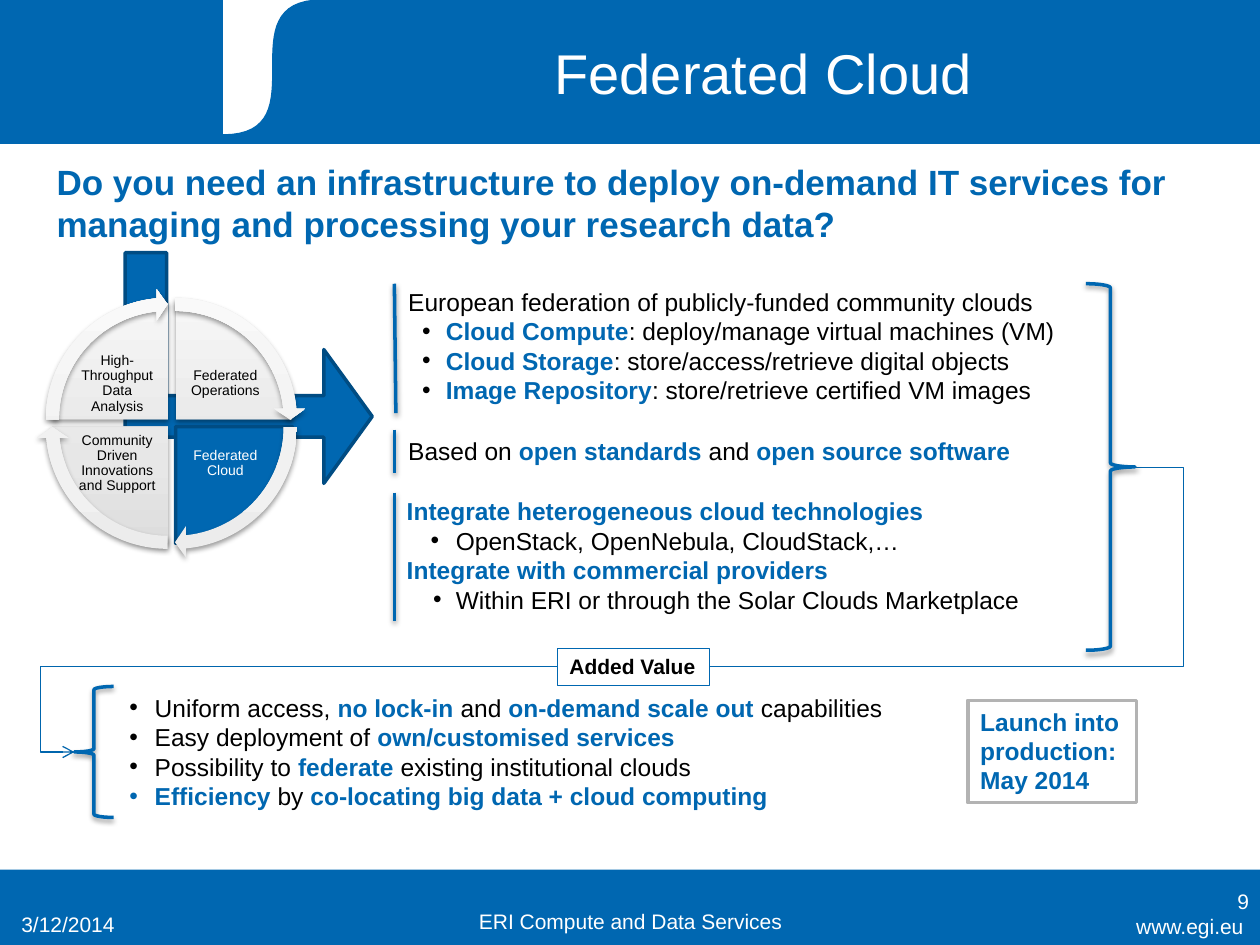
import dataclasses
import typing

import pptx
import pptx.dml.color
import pptx.enum.shapes
import pptx.enum.text
import pptx.oxml
import pptx.oxml.ns
import pptx.util

Cm = pptx.util.Cm
Pt = pptx.util.Pt
qn = pptx.oxml.ns.qn
KIND = pptx.enum.shapes.MSO_SHAPE
LINK = pptx.enum.shapes.MSO_CONNECTOR
ALIGN = pptx.enum.text.PP_ALIGN
ANCHOR = pptx.enum.text.MSO_ANCHOR
NS = 'xmlns:a="http://schemas.openxmlformats.org/drawingml/2006/main"'
HUES = {"blue": "0067B1", "edge": "004C83", "link": "0065AD", "white": "FFFFFF",
        "black": "000000", "gray": "B3B3B3"}
PALE = ((0, "DDDDDD"), (35, "E7E7E7"), (100, "F6F6F6"))
LIGHT = ((0, "ECECEC"), (35, "F1F1F1"), (100, "F9F9F9"))
Place = tuple[float, float, float, float]


@dataclasses.dataclass
class Item:
    text: str
    left: float = 0
    hang: float = 0
    dot: str = ""


@dataclasses.dataclass
class Block:
    place: Place
    items: list[Item]
    size: float = 14
    hue: str = "black"
    bold: bool = False
    fill: str = ""
    line: str = ""
    width: float = 0.75
    frame: dict = dataclasses.field(default_factory=dict)
    para: dict = dataclasses.field(default_factory=dict)


@dataclasses.dataclass
class Sector:
    text: str
    side: int
    row: int
    start: int
    stop: int


def tint(name: str) -> pptx.dml.color.RGBColor:
    return pptx.dml.color.RGBColor.from_string(HUES[name])


def apply(thing: typing.Any, values: dict) -> None:
    for key, value in values.items():
        setattr(thing, key, value)


def paint(shape: typing.Any, fill: str, line: str, width: float) -> None:
    if fill:
        shape.fill.solid()
        shape.fill.fore_color.rgb = tint(fill)
    else:
        shape.fill.background()
    if line:
        shape.line.color.rgb = tint(line)
        shape.line.width = Pt(width)
    else:
        shape.line.fill.background()
    shape.shadow.inherit = False


def shade(part: typing.Any, dark: bool = True) -> None:
    props = part._element.spPr
    for old in props.findall(qn("a:effectLst")):
        props.remove(old)
    glow = ('<a:outerShdw blurRad="39370" dist="20320" dir="5400000" rotWithShape="0">'
            '<a:srgbClr val="000000"><a:alpha val="38000"/></a:srgbClr></a:outerShdw>')
    props.append(pptx.oxml.parse_xml(f"<a:effectLst {NS}>{glow if dark else ''}</a:effectLst>"))


def blend(shape: typing.Any, stops: tuple) -> None:
    shape.fill.gradient()
    marks = "".join(f'<a:gs pos="{pos * 1000}"><a:srgbClr val="{hue}"/></a:gs>'
                    for pos, hue in stops)
    props = shape._element.spPr
    props.replace(props.find(qn("a:gradFill")), pptx.oxml.parse_xml(
        f'<a:gradFill {NS} rotWithShape="1"><a:gsLst>{marks}</a:gsLst>'
        '<a:lin ang="16200000" scaled="0"/></a:gradFill>'))


def form(slide: typing.Any, kind: typing.Any, place: Place, fill: str = "",
         line: str = "", width: float = 0.75, bends: tuple = ()) -> typing.Any:
    shape = slide.shapes.add_shape(kind, *map(Cm, place))
    for spot, bend in enumerate(bends):
        shape.adjustments[spot] = bend
    paint(shape, fill, line, width)
    return shape


def mark(para: typing.Any, item: Item) -> None:
    props = para._p.get_or_add_pPr()
    props.set("marL", str(Cm(item.left)))
    props.set("indent", str(Cm(-item.hang)))
    if item.dot:
        props.append(pptx.oxml.parse_xml(
            f'<a:buClr {NS}><a:srgbClr val="{HUES[item.dot]}"/></a:buClr>'))
    props.append(pptx.oxml.parse_xml(f'<a:buFont {NS} typeface="Arial"/>'))
    props.append(pptx.oxml.parse_xml(f'<a:buChar {NS} char="•"/>'))


def write(slide: typing.Any, block: Block) -> None:
    if block.fill:
        shape = form(slide, KIND.RECTANGLE, block.place, block.fill, block.line, block.width)
    else:
        shape = slide.shapes.add_textbox(*map(Cm, block.place))
    frame = shape.text_frame
    apply(frame, {"word_wrap": True, "vertical_anchor": ANCHOR.TOP} | block.frame)
    for spot, item in enumerate(block.items):
        para = frame.add_paragraph() if spot else frame.paragraphs[0]
        apply(para, {"alignment": ALIGN.LEFT} | block.para)
        if item.hang:
            mark(para, item)
        for turn, words in enumerate(item.text.split("*")):
            if words:
                run = para.add_run()
                run.text = words
                strong = turn % 2 == 1
                apply(run.font, {"name": "Arial", "size": Pt(block.size),
                                 "bold": strong or block.bold})
                run.font.color.rgb = tint("blue" if strong else block.hue)


def join(slide: typing.Any, ends: Place, hue: str, width: float,
         bend: float | None = None, arrow: bool = False) -> None:
    kind = LINK.STRAIGHT if bend is None else LINK.ELBOW
    link = slide.shapes.add_connector(kind, *map(Cm, ends))
    link.line.color.rgb = tint(hue)
    link.line.width = Pt(width)
    props = link._element.spPr
    if bend is not None:
        geom = props.find(qn("a:prstGeom"))
        for old in list(geom):
            geom.remove(old)
        geom.append(pptx.oxml.parse_xml(
            f'<a:avLst {NS}><a:gd name="adj1" fmla="val {round(bend * 100000)}"/></a:avLst>'))
    if arrow:
        props.find(qn("a:ln")).append(pptx.oxml.parse_xml(f'<a:tailEnd {NS} type="arrow"/>'))
    shade(link, bend is None)


def swoosh(slide: typing.Any) -> None:
    left, right, base, turn = 4.5, 9.5, 2.72, 6.5
    form(slide, KIND.RECTANGLE, (left, 0, right - left, base), "white", "white")
    steps = [n / 32 for n in range(1, 33)]
    curve = [(left * ((1 - t) ** 3 + 3 * (1 - t) * t * t)
              + turn * (3 * (1 - t) ** 2 * t + t ** 3),
              base * ((1 - t) ** 3 + 3 * (1 - t) ** 2 * t)) for t in steps]
    path = slide.shapes.build_freeform(Cm(right), 0)
    path.add_line_segments([(Cm(x), Cm(y)) for x, y in [(right, base), (left, base)] + curve])
    paint(path.convert_to_shape(), "blue", "blue", 0.75)


def wheel(slide: typing.Any, parts: list[Sector]) -> None:
    for part in parts:
        live = part.text == "Federated Cloud"
        pie = form(slide, KIND.PIE, (1.04 + 0.15 * part.side, 6.1 + 0.15 * part.row, 4.7, 4.7),
                   "blue", "edge" if live else "", 2, (part.start, part.stop))
        if not live:
            blend(pie, PALE)
            shade(pie)
        edges = dict.fromkeys(("margin_left", "margin_top", "margin_right", "margin_bottom"),
                              Cm(0.03))
        write(slide, Block((1.5 + 2.18 * part.side, 7.09 + 1.6 * part.row, 1.73, 1.3),
                           [Item(part.text)], 8, "white" if live else "black",
                           frame=edges | {"vertical_anchor": ANCHOR.MIDDLE},
                           para={"alignment": ALIGN.CENTER, "line_spacing": 0.9}))
    for part in parts:
        ring = form(slide, KIND.CIRCULAR_ARROW,
                    (0.74 + 0.15 * part.side, 5.82 + 0.15 * part.row, 5.28, 5.28), "white",
                    bends=(0.05, 3.28, part.start + 50.73, part.start, 0.06))
        blend(ring, LIGHT)
        shade(ring)


def main() -> None:
    deck = pptx.Presentation()
    apply(deck, {"slide_width": Cm(25.4), "slide_height": Cm(19.05)})
    slide = deck.slides.add_slide(deck.slide_layouts[6])
    form(slide, KIND.RECTANGLE, (0, 17.53, 25.4, 1.52), "blue")
    form(slide, KIND.RECTANGLE, (0, 0, 25.4, 2.9), "blue", "blue")
    swoosh(slide)
    mid, low = ({"vertical_anchor": spot} for spot in (ANCHOR.MIDDLE, ANCHOR.BOTTOM))
    right, center = ({"alignment": way} for way in (ALIGN.RIGHT, ALIGN.CENTER))
    blocks = [
        Block((21.31, 18.29, 4.01, 0.79), [Item("www.egi.eu")], 12, "white", para=right),
        Block((5.89, 0.33, 19, 2.41), [Item("Federated Cloud")], 32, "white", frame=mid,
              para=center | {"line_spacing": 0.9}),
        Block((0.18, 17.98, 5.92, 1.02), [Item("3/12/2014")], 12, "white", frame=low),
        Block((8.69, 17.93, 8.05, 1.02), [Item("ERI Compute and Data Services")], 12, "white",
              frame=low, para=center),
        Block((19.51, 17.65, 5.92, 1.02), [Item("9")], 12, "white", frame=mid, para=right),
        Block((0.89, 3.12, 23.39, 1.96), [Item(
            "Do you need an infrastructure to deploy on-demand IT services for "
            "managing and processing your research data?")], 20, "blue", True),
        Block((7.98, 5.66, 14.02, 2.64), [
            Item("European federation of publicly-funded community clouds"),
            Item("*Cloud Compute*: deploy/manage virtual machines (VM)", 0.76, 0.48, "black"),
            Item("*Cloud Storage*: store/access/retrieve digital objects", 0.76, 0.48, "black"),
            Item("*Image Repository*: store/retrieve certified VM images", 0.76, 0.48, "black")]),
        Block((7.95, 9.88, 14.05, 2.64), [
            Item("*Integrate heterogeneous cloud technologies*"),
            Item("OpenStack, OpenNebula, CloudStack,…", 0.99, 0.51),
            Item("*Integrate with commercial providers*"),
            Item("Within ERI or through the Solar Clouds Marketplace", 0.99, 0.46)]),
        Block((7.98, 8.66, 14.02, 0.86),
              [Item("Based on *open standards* and *open source software*")]),
        Block((2.36, 13.84, 20.8, 2.64), [Item(words, 0.51, 0.51) for words in (
            "Uniform access, *no lock-in *and *on-demand scale out *capabilities",
            "Easy deployment of *own/customised services*",
            "Possibility to *federate *existing institutional clouds",
            "*Efficiency *by *co-locating big data + cloud computing*")]),
        Block((11.23, 13.06, 3.07, 0.76), [Item("Added Value")], 12, bold=True, fill="white",
              line="blue", width=0.25, frame={"word_wrap": False}),
        Block((19.51, 14.12, 3.4, 2.06), [Item("Launch into production: May 2014")], 14, "blue",
              True, "white", "gray", 2)]
    for block in blocks:
        write(slide, block)
    for ends in ((7.95, 5.72, 7.98, 8.33), (7.95, 9.93, 7.95, 12.52), (7.95, 8.66, 7.95, 9.53)):
        join(slide, ends, "blue", 2)
    join(slide, (11.23, 13.44, 1.5, 15.16), "link", 0.75, 1.07, True)
    join(slide, (22.91, 9.42, 14.3, 13.44), "link", 0.75, -0.11)
    arrow = form(slide, KIND.BENT_UP_ARROW, (2.69, 4.93, 4.65, 4.98), "blue", "edge", 2,
                 (0.18, 0.29, 0.21))
    arrow.rotation = 270
    for flip in ("flipH", "flipV"):
        arrow._element.spPr.find(qn("a:xfrm")).set(flip, "1")
    wheel(slide, [Sector("Federated Operations", 1, 0, 162, 0),
                  Sector("Federated Cloud", 1, 1, 0, 54),
                  Sector("Community Driven Innovations and Support", 0, 1, 54, 108),
                  Sector("High-Throughput Data Analysis", 0, 0, 108, 162)])
    for kind, place in ((KIND.RIGHT_BRACE, (21.89, 5.72, 0.99, 7.39)),
                        (KIND.LEFT_BRACE, (1.5, 13.84, 0.79, 2.64))):
        shade(form(slide, kind, place, line="blue", width=2))
    deck.save("out.pptx")


if __name__ == "__main__":
    main()
